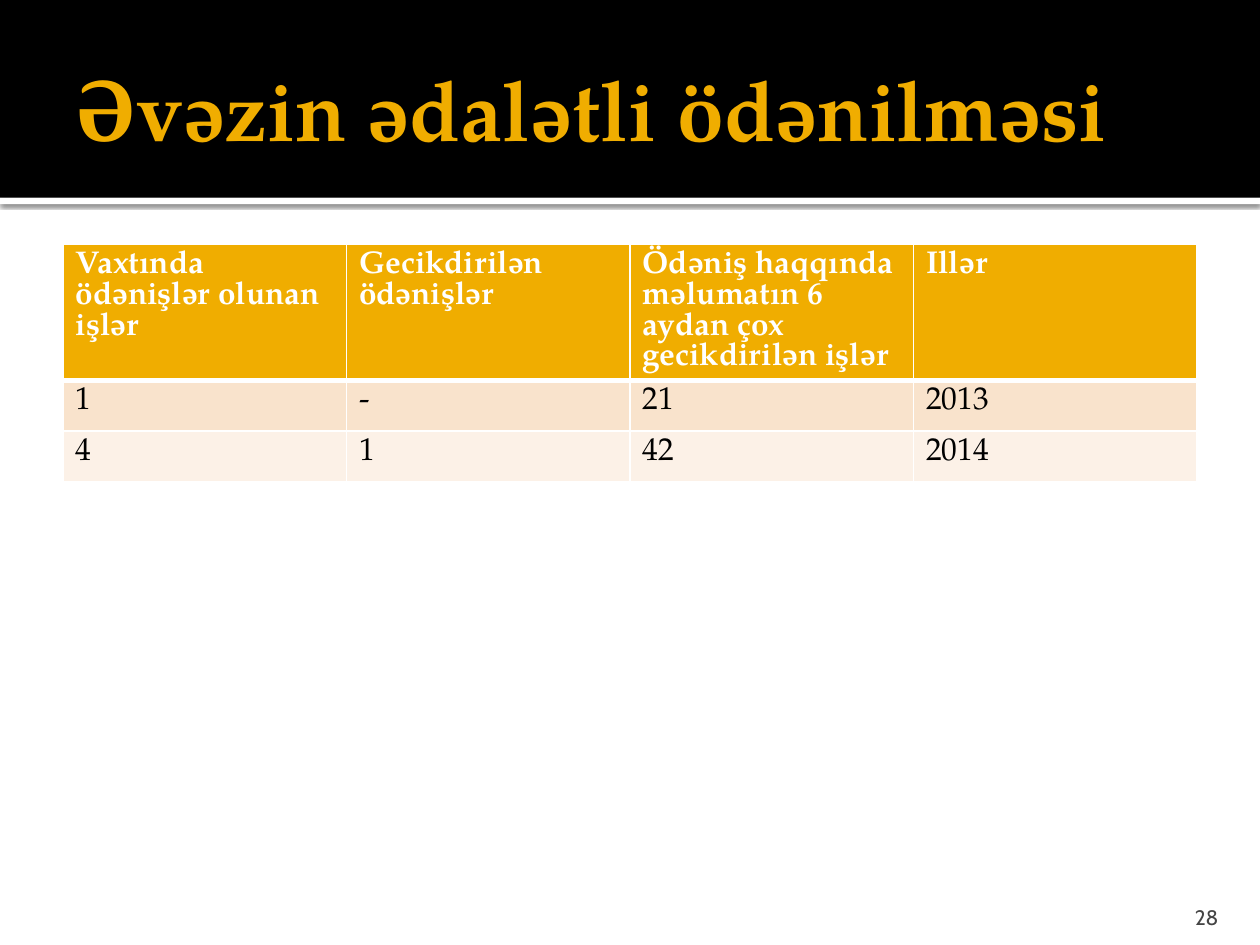
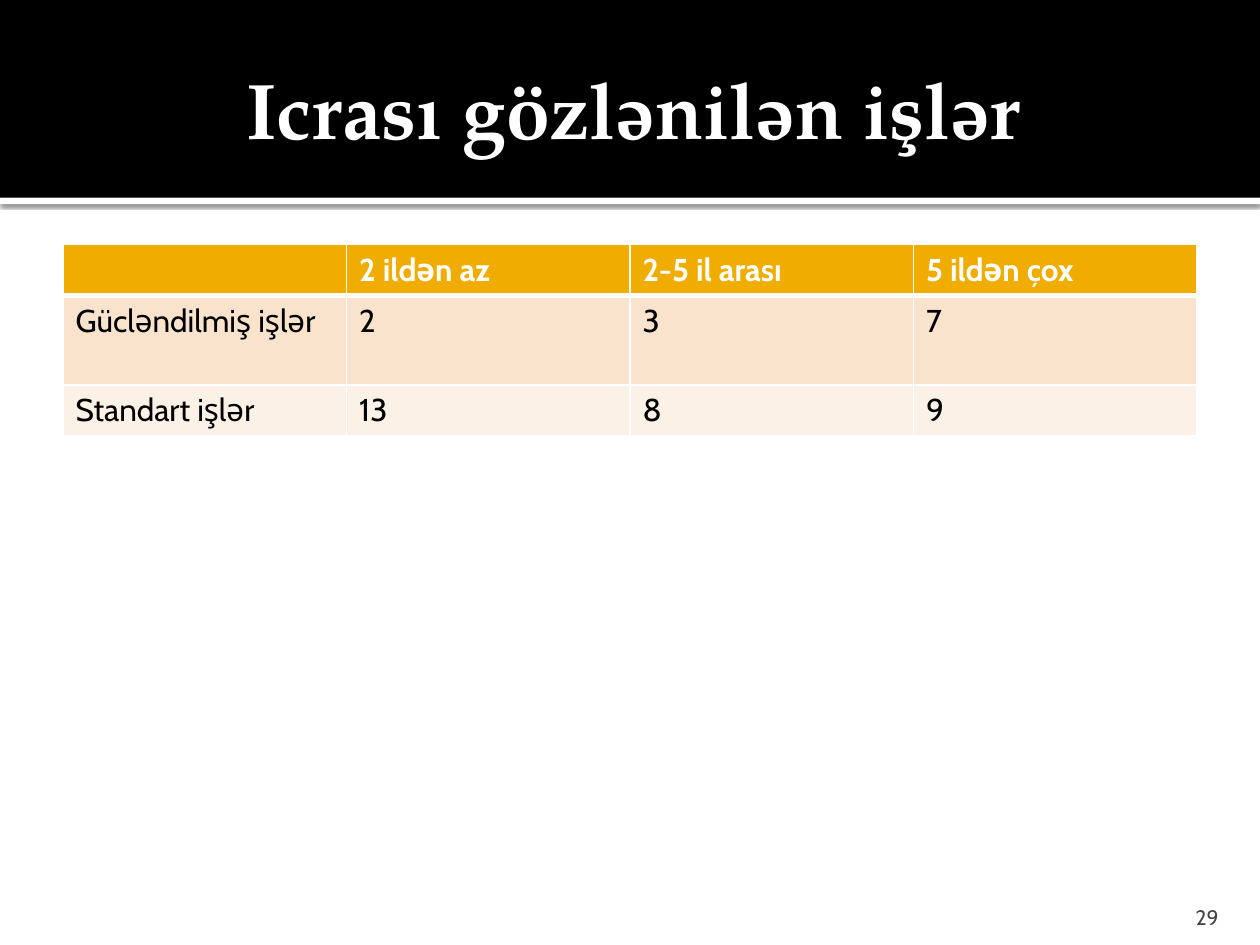
from dataclasses import dataclass

from lxml import etree
from pptx import Presentation
from pptx.dml.color import RGBColor
from pptx.enum.shapes import MSO_SHAPE
from pptx.enum.text import MSO_ANCHOR, MSO_AUTO_SIZE, PP_ALIGN
from pptx.oxml.ns import qn
from pptx.util import Inches, Pt

RECTANGLE = MSO_SHAPE.RECTANGLE
MIDDLE, BOTTOM = MSO_ANCHOR.MIDDLE, MSO_ANCHOR.BOTTOM
LEFT, CENTER, RIGHT = PP_ALIGN.LEFT, PP_ALIGN.CENTER, PP_ALIGN.RIGHT
NO_AUTOFIT = MSO_AUTO_SIZE.NONE
TITLE_ONLY_LAYOUT = 5


@dataclass(frozen=True)
class Theme:
    """Colours, fonts, type sizes and slide size shared by the slides."""

    black: str = "000000"
    white: str = "FFFFFF"
    gold: str = "F0AD00"
    bands: tuple = ("F9E3CC", "FCF1E7")
    grey: str = "454545"
    serif: str = "TeX Gyre Pagella"
    sans: str = "Cabin"
    table_size: int = 18
    number_size: int = 12
    thin: int = 1
    thick: int = 3
    width: float = 10
    height: float = 7.5


@dataclass(frozen=True)
class Box:
    """A region given in shares of the slide's width and height."""

    left: float
    top: float
    width: float
    height: float

    def lengths(self):
        """Return left, top, width and height as slide lengths."""
        return (Inches(self.left * THEME.width), Inches(self.top * THEME.height),
                Inches(self.width * THEME.width), Inches(self.height * THEME.height))


THEME = Theme()
BAND_SHARE = 1.57 / THEME.height
HEADER_BAND = Box(0, 0, 1, BAND_SHARE)
HEADER_RULE = Box(0, BAND_SHARE, 1, 0.05 / THEME.height)
TITLE_BOX = Box(0.05, 0.17 / THEME.height, 0.9, 1.37 / THEME.height)
TABLE_BOX = Box(0.05, 1.94 / THEME.height, 0.9, 0.25)
NUMBER_BOX = Box(0.897, 7.08 / THEME.height, 0.08, 0.04)

SLIDES = (
    {
        "title": "Əvəzin ədalətli ödənilməsi",
        "title_format": {"size": 48, "color": THEME.gold, "align": LEFT},
        "table_font": THEME.serif,
        "row_heights": (1.07, 0.4, 0.4),
        "rows": (
            ("Vaxtında ödənişlər olunan işlər", "Gecikdirilən ödənişlər",
             "Ödəniş haqqında məlumatın 6 aydan çox gecikdirilən işlər", "Illər"),
            ("1", "-", "21", "2013"),
            ("4", "1", "42", "2014"),
        ),
        "number": "28",
    },
    {
        "title": "Icrası gözlənilən işlər",
        "title_format": {"size": 45, "color": THEME.white, "align": CENTER},
        "table_font": THEME.sans,
        "row_heights": (0.4, 0.71, 0.4),
        "rows": (
            ("", "2 ildən az", "2-5 il arası", "5 ildən çox"),
            ("Gücləndilmiş işlər", "2", "3", "7"),
            ("Standart işlər", "13", "8", "9"),
        ),
        "number": "29",
    },
)


def apply_format(target, values):
    """Set each attribute of the target from a dict of values."""
    for name, value in values.items():
        setattr(target, name, value)


def write_text(frame, text, font, size, color, bold=False, align=LEFT):
    """Write one formatted paragraph into a text frame."""
    paragraph = frame.paragraphs[0]
    paragraph.alignment = align
    run = paragraph.add_run()
    run.text = text
    apply_format(run.font, {"name": font, "size": Pt(size), "bold": bold})
    run.font.color.rgb = RGBColor.from_string(color)


def set_frame(frame, anchor, left, top, right, bottom):
    """Set the wrapping, anchor and insets of a text frame."""
    apply_format(frame, {
        "word_wrap": True, "auto_size": NO_AUTOFIT, "vertical_anchor": anchor,
        "margin_left": Inches(left), "margin_top": Inches(top),
        "margin_right": Inches(right), "margin_bottom": Inches(bottom),
    })


def add_color(parent, color):
    """Add a solid colour element and return it."""
    return etree.SubElement(parent, qn("a:srgbClr"), val=color)


def add_band(slide, box, color):
    """Draw a plain filled band across the given box."""
    band = slide.shapes.add_shape(RECTANGLE, *box.lengths())
    band.shadow.inherit = False
    band.fill.solid()
    band.fill.fore_color.rgb = RGBColor.from_string(color)
    band.line.fill.background()
    return band


def add_header(slide):
    """Draw the black header and its shadowed rule behind the slide's text."""
    rule = add_band(slide, HEADER_RULE, THEME.white)
    effects = rule.element.spPr.find(qn("a:effectLst"))
    shadow = etree.SubElement(effects, qn("a:outerShdw"), blurRad=str(Pt(2.5)),
                              dist=str(Pt(0.8)), dir=str(90 * 60000),
                              algn="t", rotWithShape="0")
    etree.SubElement(add_color(shadow, THEME.black), qn("a:alpha"), val="60000")
    band = add_band(slide, HEADER_BAND, THEME.black)
    tree = slide.shapes.element
    for position, shape in enumerate((rule, band), start=2):
        tree.insert(position, shape.element)


def add_title(slide, box, text, title_format):
    """Place and fill the title placeholder."""
    title = slide.shapes.title
    apply_format(title, dict(zip(("left", "top", "width", "height"), box.lengths())))
    set_frame(title.text_frame, MIDDLE, 0.1, 0.05, 0.05, 0.05)
    write_text(title.text_frame, text, THEME.serif, bold=True, **title_format)


def set_borders(cell, widths):
    """Give a cell white borders with a width in points for each side."""
    properties = cell._tc.get_or_add_tcPr()
    for position, (side, width) in enumerate(widths.items()):
        line = etree.Element(qn(f"a:{side}"), w=str(Pt(width)))
        add_color(etree.SubElement(line, qn("a:solidFill")), THEME.white)
        properties.insert(position, line)


def add_table(slide, box, rows, row_heights, font):
    """Draw a table of equal columns with a gold header and tinted rows."""
    left, top, width, _ = box.lengths()
    column_count = len(rows[0])
    table = slide.shapes.add_table(len(rows), column_count, left, top, width,
                                   Inches(sum(row_heights))).table
    for column in table.columns:
        column.width = width // column_count
    for row_index, (texts, row_height) in enumerate(zip(rows, row_heights)):
        table.rows[row_index].height = Inches(row_height)
        is_header = row_index == 0
        fill = THEME.gold if is_header else THEME.bands[(row_index - 1) % 2]
        color = THEME.white if is_header else THEME.black
        widths = {"lnL": THEME.thin, "lnR": THEME.thin,
                  "lnT": THEME.thick if row_index == 1 else THEME.thin,
                  "lnB": THEME.thick if is_header else THEME.thin}
        for column_index, text in enumerate(texts):
            cell = table.cell(row_index, column_index)
            cell.fill.solid()
            cell.fill.fore_color.rgb = RGBColor.from_string(fill)
            set_borders(cell, widths)
            if text:
                write_text(cell.text_frame, text, font, THEME.table_size, color,
                           bold=is_header)


def add_slide_number(slide, box, number):
    """Write the slide number at the lower right."""
    frame = slide.shapes.add_textbox(*box.lengths()).text_frame
    set_frame(frame, BOTTOM, 0.1, 0.05, 0.1, 0)
    write_text(frame, number, THEME.sans, THEME.number_size, THEME.grey, align=RIGHT)


def add_table_slide(presentation, content):
    """Build one slide with a title, a table and a number."""
    slide = presentation.slides.add_slide(presentation.slide_layouts[TITLE_ONLY_LAYOUT])
    add_header(slide)
    add_title(slide, TITLE_BOX, content["title"], content["title_format"])
    add_table(slide, TABLE_BOX, content["rows"], content["row_heights"],
              content["table_font"])
    add_slide_number(slide, NUMBER_BOX, content["number"])


def main():
    """Build and save the presentation."""
    presentation = Presentation()
    apply_format(presentation, {"slide_width": Inches(THEME.width),
                                "slide_height": Inches(THEME.height)})
    for content in SLIDES:
        add_table_slide(presentation, content)
    presentation.save("out.pptx")


if __name__ == "__main__":
    main()
